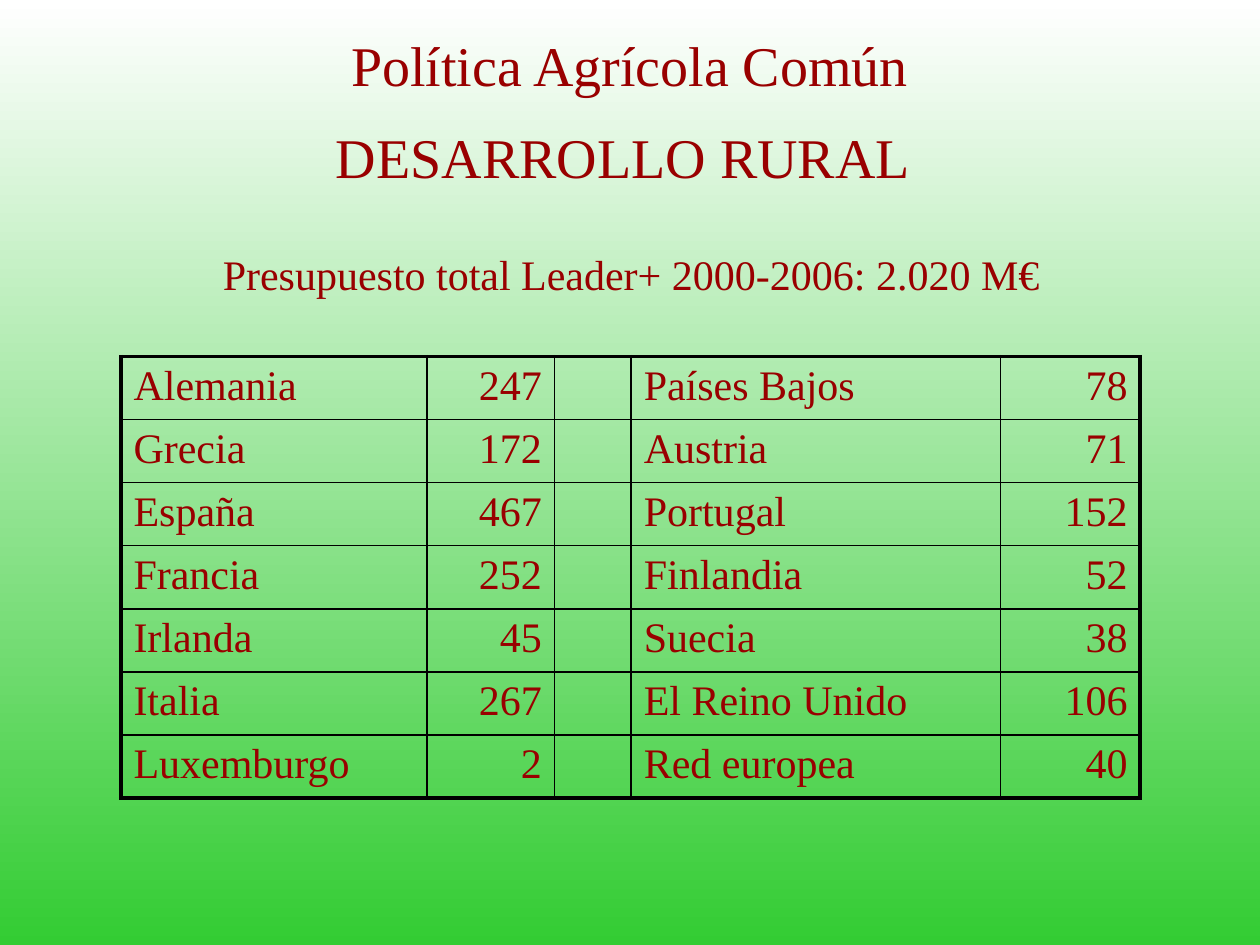
import pptx
import pptx.util
import pptx.dml.color
import pptx.enum.text
import pptx.oxml
import pptx.oxml.ns
import lxml.etree

Inches, Pt = pptx.util.Inches, pptx.util.Pt
ALIGN = pptx.enum.text.PP_ALIGN
ANCHOR = pptx.enum.text.MSO_ANCHOR


def color(code):
    return pptx.dml.color.RGBColor.from_string(code)


def style(para, size, align):
    para.alignment = align
    para.font.name = "Times New Roman"
    para.font.size = Pt(size)
    para.font.color.rgb = color("990000")


deck = pptx.Presentation()
deck.slide_width, deck.slide_height = Inches(10), Inches(7.5)
slide = deck.slides.add_slide(deck.slide_layouts[6])

fill = slide.background.fill
fill.gradient()
fill.gradient_angle = 270
for stop, code, place in zip(fill.gradient_stops, ["FFFFFF", "33CC33"], [0, 1]):
    stop.color.rgb = color(code)
    stop.position = place

heads = [
    ("Política Agrícola Común", 0.75, 0.17, 8.5, 0.67, 32, ALIGN.CENTER, ANCHOR.MIDDLE, 0),
    ("DESARROLLO RURAL ", 0.33, 0.92, 9.33, 0.63, 32, ALIGN.CENTER, ANCHOR.TOP, 3),
    ("Presupuesto total Leader+ 2000-2006: 2.020 M€",
     1.67, 1.92, 6.83, 0.5, 24, ALIGN.LEFT, ANCHOR.TOP, 2.5),
]
for text, left, top, width, height, size, align, anchor, gap in heads:
    box = slide.shapes.add_textbox(Inches(left), Inches(top), Inches(width), Inches(height))
    frame = box.text_frame
    frame.word_wrap = True
    frame.vertical_anchor = anchor
    para = frame.paragraphs[0]
    para.text = text
    para.space_before = Pt(gap)
    style(para, size, align)

rows = [
    ("Alemania", "247", "", "Países Bajos", "78"),
    ("Grecia", "172", "", "Austria", "71"),
    ("España", "467", "", "Portugal", "152"),
    ("Francia", "252", "", "Finlandia", "52"),
    ("Irlanda", "45", "", "Suecia", "38"),
    ("Italia", "267", "", "El Reino Unido", "106"),
    ("Luxemburgo", "2", "", "Red europea", "40"),
]
widths = [2.43, 1.01, 0.61, 2.93, 1.11]
table = slide.shapes.add_table(
    len(rows), len(widths), Inches(0.96), Inches(2.83), Inches(sum(widths)), Inches(3.5)
).table
table.first_row = table.horz_banding = False
for col, width in zip(table.columns, widths):
    col.width = Inches(width)

for r, row in enumerate(rows):
    table.rows[r].height = Inches(0.5)
    for c, text in enumerate(row):
        cell = table.cell(r, c)
        para = cell.text_frame.paragraphs[0]
        para.text = text
        style(para, 24, ALIGN.RIGHT if c in (1, 4) else ALIGN.LEFT)
        props = cell._tc.get_or_add_tcPr()
        edges = {
            "L": c == 0,
            "R": c == len(widths) - 1,
            "T": r == 0,
            "B": r == len(rows) - 1,
        }
        for side, outer in edges.items():
            line = lxml.etree.SubElement(props, pptx.oxml.ns.qn(f"a:ln{side}"))
            line.set("w", str(Pt(2.25 if outer else 1)))
            paint = lxml.etree.SubElement(line, pptx.oxml.ns.qn("a:solidFill"))
            lxml.etree.SubElement(paint, pptx.oxml.ns.qn("a:srgbClr")).set("val", "000000")
        cell.fill.background()

deck.save("out.pptx")
